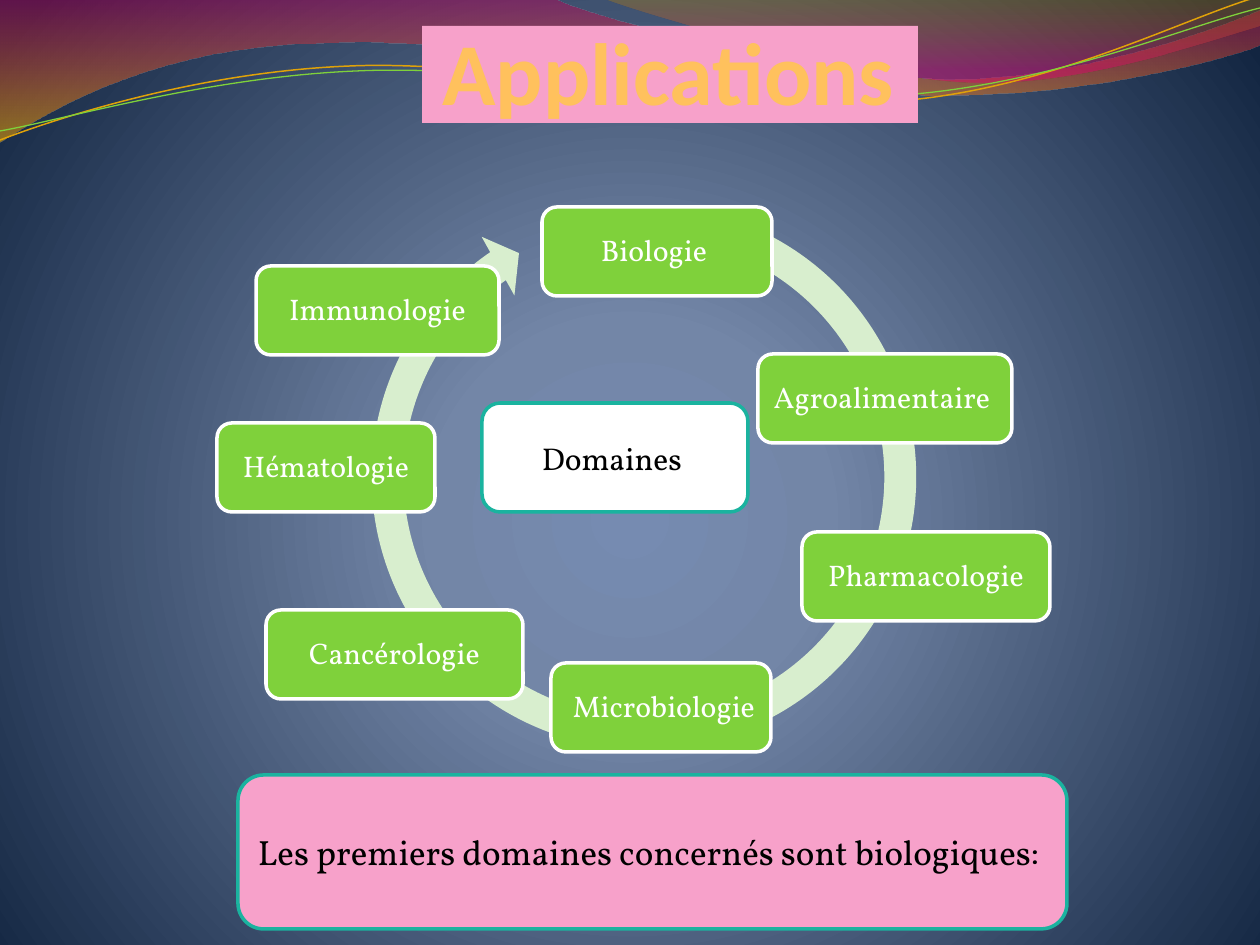
from lxml.etree import SubElement, fromstring
from pptx import Presentation
from pptx.dml.color import RGBColor
from pptx.enum.shapes import MSO_SHAPE as Geo
from pptx.enum.text import MSO_ANCHOR as Anchor, PP_ALIGN as Align
from pptx.oxml.ns import qn, nsdecls
from pptx.util import Emu, Pt

UNIT = 914400 / 126


def px(n):
    return Emu(round(n * UNIT))


def rgb(code):
    return RGBColor.from_string(code)


def bend(trace, steps):
    """Merge the three segments of each curved step into one cubic."""
    segs = iter(trace.findall(qn("a:lnTo")))
    for step in steps:
        group = [next(segs) for _ in range(len(step) // 2)]
        if len(group) == 3:
            cubic = SubElement(trace, qn("a:cubicBezTo"))
            trace.replace(group[0], cubic)
            for seg in group:
                cubic.append(seg[0])
            for seg in group[1:]:
                trace.remove(seg)


def blend(parent, stops, shade):
    """Swap the solid fill of an element for a gradient."""
    marks = ""
    for pos, code, alpha in stops:
        veil = f'<a:alpha val="{alpha * 1000}"/>' if alpha < 100 else ""
        marks += f'<a:gs pos="{pos * 1000}"><a:srgbClr val="{code}">{veil}</a:srgbClr></a:gs>'
    grad = fromstring(f'<a:gradFill {nsdecls("a")} rotWithShape="1">'
                      f'<a:gsLst>{marks}</a:gsLst>{shade}</a:gradFill>')
    parent.replace(parent.find(qn("a:solidFill")), grad)


class Deck:
    """Holds the style and the current slide."""

    font = "Vollkorn"
    green, teal, pink, white, black = "7FD13B", "1AB39F", "F7A1CA", "FFFFFF", "000000"

    def __init__(self):
        self.prs = Presentation()
        self.prs.slide_width, self.prs.slide_height = px(1260), px(945)
        self.slide = self.prs.slides.add_slide(self.prs.slide_layouts[5])
        self.shapes = self.slide.shapes

    def back(self, stops):
        self.slide.background.fill.solid()
        shade = ('<a:path path="circle"><a:fillToRect l="10000" t="110000" '
                 'r="10000" b="100000"/></a:path>')
        blend(self.slide.element.find(".//" + qn("p:bgPr")), stops, shade)

    def paint(self, shape, fill, line, width=2):
        shape.shadow.inherit = False
        for part, code in ((shape.fill, fill), (shape.line.fill, line)):
            if code:
                part.solid()
                part.fore_color.rgb = rgb(code)
            else:
                part.background()
        if line:
            shape.line.width = Pt(width)

    def wave(self, start, steps, stops=None, line=None, width=1):
        pen = self.shapes.build_freeform(*start, scale=UNIT)
        dots = [step[i:i + 2] for step in steps for i in range(0, len(step), 2)]
        pen.add_line_segments(dots, close=bool(stops))
        shape = pen.convert_to_shape()
        bend(shape.element.find(".//" + qn("a:path")), steps)
        self.paint(shape, self.white if stops else None, line, width)
        if stops:
            blend(shape.element.spPr, stops, '<a:lin ang="5400000" scaled="0"/>')

    def text(self, shape, words, size, color, align=Align.CENTER, font=None, bold=False):
        frame = shape.text_frame
        frame.word_wrap = True
        frame.vertical_anchor = Anchor.MIDDLE
        para = frame.paragraphs[0]
        para.alignment = align
        run = para.add_run()
        run.text = words
        run.font.name, run.font.size, run.font.bold = font or self.font, Pt(size), bold
        run.font.color.rgb = rgb(color)
        return frame

    def title(self, words, *box):
        shape = self.shapes.title
        shape.left, shape.top, shape.width, shape.height = map(px, box)
        shape.fill.solid()
        shape.fill.fore_color.rgb = rgb(self.pink)
        frame = self.text(shape, words, 50.4, "FFC15D", font="Calibri", bold=True)
        frame.vertical_anchor = Anchor.BOTTOM
        frame.margin_left = frame.margin_top = frame.margin_bottom = 0
        frame.margin_right = px(3)
        self.shapes.element.append(shape.element)

    def ring(self, x, y, size, turns):
        shape = self.shapes.add_shape(Geo.CIRCULAR_ARROW, px(x), px(y), px(size), px(size))
        for i, turn in enumerate(turns):
            shape.adjustments[i] = turn
        self.paint(shape, "D8EECE", None)

    def card(self, words, box, fill, line, size, color, align=Align.CENTER):
        shape = self.shapes.add_shape(Geo.ROUNDED_RECTANGLE, *map(px, box))
        self.paint(shape, fill, line)
        return self.text(shape, words, size, color, align)

    def field(self, words, x, y, wide):
        frame = self.card(words, (x, y, wide, 89), self.green, self.white, 17, self.white)
        frame.margin_left = frame.margin_right = px(8)
        frame.margin_top = frame.margin_bottom = px(8)
        frame.paragraphs[0].line_spacing = 0.9


def main():
    deck = Deck()
    deck.back([(0, "768BB1", 100), (25, "7386A7", 100), (100, "122541", 100)])
    deck.wave((0, 0), [
        (554, -1), (600, 21, 837, 79, 955, 79), (1074, 79, 1207, 33, 1260, 11),
        (1261, 45), (1238, 55, 1096, 96, 940, 95), (784, 95, 481, 35, 324, 43),
        (163, 45, 58, 105, -1, 142), (0, 0)],
        stops=[(0, "BD0059", 45), (100, "F0AB00", 55)])
    deck.wave((604, -1), [
        (641, 14, 859, 78, 969, 82), (1079, 87, 1211, 40, 1260, 26),
        (1260, 0), (604, -1)],
        stops=[(0, "C38B00", 30), (80, "E1006B", 45)])
    deck.wave((0, 140), [
        (60, 117, 199, 72, 349, 66), (498, 59, 747, 112, 898, 101),
        (1050, 89, 1182, 19, 1257, -3)], line="E0A209", width=0.85)
    deck.wave((0, 131), [
        (59, 121, 207, 77, 357, 71), (508, 64, 752, 106, 903, 95),
        (1053, 84, 1186, 26, 1260, 8)], line=deck.green, width=0.75)

    deck.card("Domaines ", (482, 403, 266, 109), deck.white, deck.teal, 18, deck.black)
    deck.ring(354, 187, 580, (0.055, 3.307, 141.19, 171.805, 0.058))
    for field in (
        ("Biologie ", 542, 207, 230),
        ("Agroalimentaire ", 758, 354, 254),
        ("Pharmacologie", 802, 532, 248),
        (" Microbiologie", 551, 663, 220),
        ("Cancérologie", 266, 610, 257),
        ("Hématologie", 217, 423, 218),
        ("Immunologie", 256, 266, 243),
    ):
        deck.field(*field)

    deck.title("Applications", 422, 26, 496, 97)
    deck.card("Les premiers domaines concernés sont biologiques:", (238, 775, 829, 154),
              deck.pink, deck.teal, 20, deck.black, Align.LEFT)
    deck.prs.save("out.pptx")


if __name__ == "__main__":
    main()
